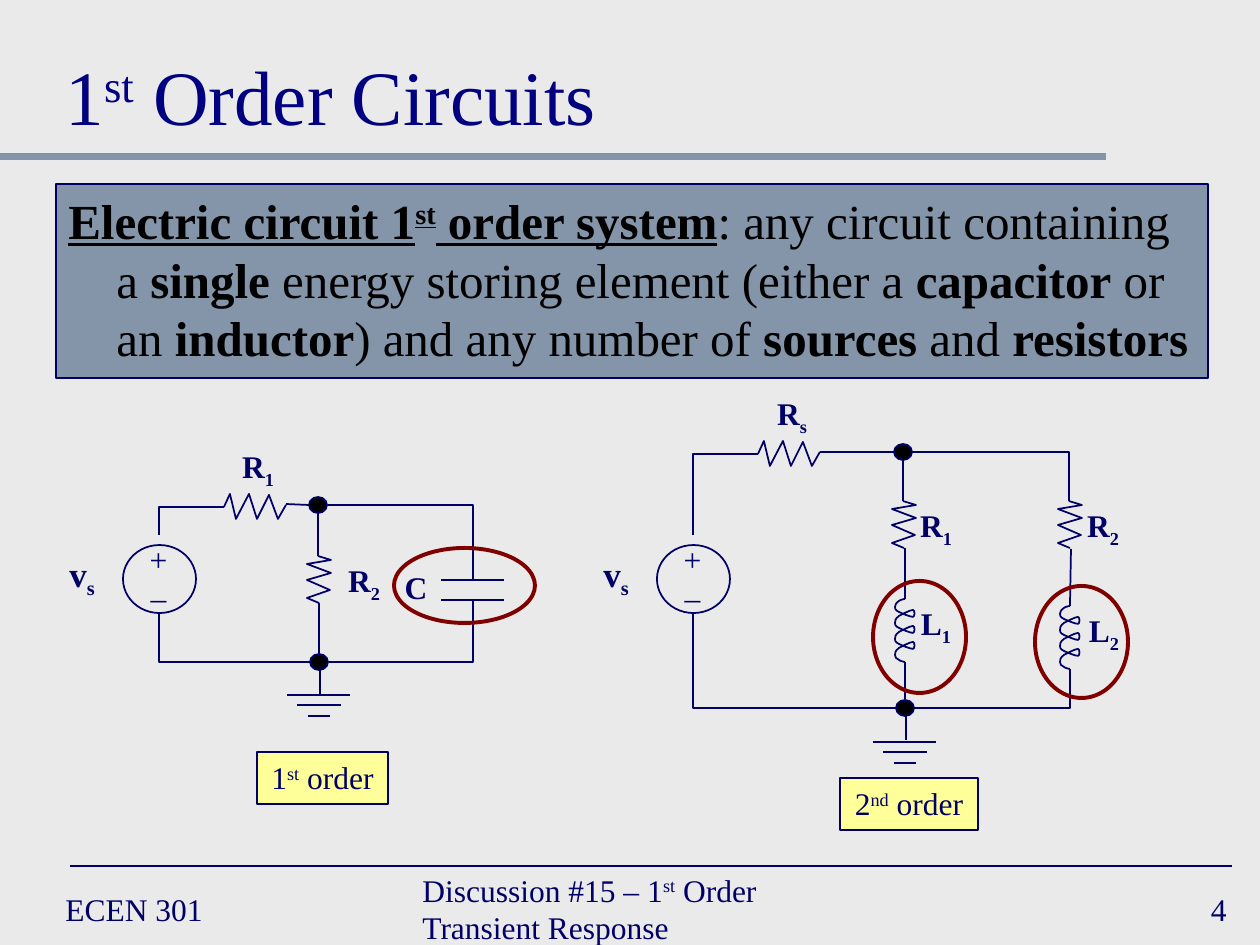
from lxml import etree
from pptx import Presentation
from pptx.dml.color import RGBColor
from pptx.enum.shapes import MSO_CONNECTOR, MSO_SHAPE
from pptx.enum.text import MSO_ANCHOR, PP_ALIGN
from pptx.oxml.ns import qn
from pptx.util import Pt

STRAIGHT, ELBOW = MSO_CONNECTOR.STRAIGHT, MSO_CONNECTOR.ELBOW
RECT, OVAL = MSO_SHAPE.RECTANGLE, MSO_SHAPE.OVAL
LEFT, CENTER, RIGHT = PP_ALIGN.LEFT, PP_ALIGN.CENTER, PP_ALIGN.RIGHT
TOP, MIDDLE, BOTTOM = MSO_ANCHOR.TOP, MSO_ANCHOR.MIDDLE, MSO_ANCHOR.BOTTOM

PX = 914400 / 126
FONT = "Times New Roman"
INK, TITLE, SLATE, RED = "000066", "000080", "8495A9", "800000"
BLACK, YELLOW, PAPER = "000000", "FFFF99", "EAEAEA"
SUP, SUB = 30, -25

# Runs are (text, baseline shift, style), where style holds "b" and "u"
HEADING = [("1", 0, ""), ("st", SUP, ""), (" Order Circuits", 0, "")]
DEFINITION = [
    ("Electric circuit 1", 0, "bu"), ("st", SUP, "bu"), (" order system", 0, "bu"),
    (": any circuit containing a ", 0, ""), ("single", 0, "b"),
    (" energy storing element (either a ", 0, ""), ("capacitor", 0, "b"),
    (" or an ", 0, ""), ("inductor", 0, "b"), (") and any number of ", 0, ""),
    ("sources", 0, "b"), (" and ", 0, ""), ("resistors", 0, "b")]
FOOTER = [
    ((53, 882, 273, 53), LEFT, [("ECEN 301", 0, "")]),
    ((410, 882, 483, 53), LEFT, [("Discussion #15 – 1", 0, ""), ("st", SUP, ""),
                                 (" Order Transient Response", 0, "")]),
    ((977, 882, 262, 53), RIGHT, [("4", 0, "")])]
CAPTIONS = [((257, 752, 131, 52), "1", "st"), ((840, 778, 138, 52), "2", "nd")]

# Component labels: centre x, top, letter, subscript, size
LABELS = [
    (258, 441, "R", "1", 18), (364, 555, "R", "2", 18), (416, 562, "C", "", 18),
    (82, 546, "v", "s", 20), (792, 388, "R", "s", 18), (936, 500, "R", "1", 18),
    (1103, 500, "R", "2", 18), (936, 598, "L", "1", 18), (1104, 605, "L", "2", 18),
    (616, 546, "v", "s", 20)]

# Corner wires leave the first point sideways and reach the second vertically
CORNERS = [
    (310, 662, 159, 614), (224, 507, 159, 535), (328, 505, 473, 580),
    (329, 662, 473, 600), (896, 708, 693, 614), (758, 454, 693, 535),
    (912, 452, 1069, 501), (914, 708, 1070, 669)]
WIRES = [
    (286, 504, 309, 505), (318, 513, 318, 556), (319, 603, 319, 654),
    (320, 662, 320, 694), (441, 580, 504, 580), (441, 600, 504, 600),
    (820, 452, 895, 452), (903, 460, 903, 501), (905, 548, 905, 599),
    (905, 662, 905, 699), (906, 708, 906, 740), (1071, 549, 1070, 606)]
SOURCES = [(159, 579), (693, 579)]
NODES = [(318, 505), (319, 662), (903, 452), (905, 708)]
GROUNDS = [(319, 695), (905, 742)]
GROUND_BARS = [(0, 63), (10, 44), (21, 22)]
FLAT_RESISTORS = [(224, 507), (758, 454)]
UPRIGHT_RESISTORS = [(318, 556), (903, 501), (1069, 501)]
COILS = [(905, 599), (1070, 606)]
RINGS = [(394, 548, 141, 75), (873, 581, 93, 112), (1035, 586, 93, 112)]

FLAT_ZIGZAG = [(0, 0), (6, -13), (12, 12), (25, -13), (33, 12), (45, -12),
               (54, 12), (62, -2)]
UPRIGHT_ZIGZAG = [(0, 0), (13, 4), (-11, 8), (13, 17), (-11, 24), (12, 34),
                  (-11, 42), (1, 47)]
COIL_START = [(0, 0), (-1, 0), (-5, 1), (-6, 2), (-9, 4), (-10, 6), (-10, 8)]
COIL_TURN = [(-10, 2), (-10, 3), (-6, 5), (-4, 6), (5, 10), (8, 10), (10, 10),
             (10, 3), (8, 3), (5, 3), (-4, 8), (-6, 9), (-10, 12), (-10, 14), (-10, 16)]
COIL_END = [(-10, 58), (-9, 60), (-6, 61), (-5, 62), (-1, 63), (0, 63)]
COIL = (COIL_START + [(x, y + 8 + 16 * turn) for turn in range(3) for x, y in COIL_TURN]
        + COIL_END)


def emu(*values):
    return [round(v * PX) for v in values]


def rgb(color):
    return RGBColor.from_string(color)


def outline(sp, fill, line, width=1):
    sp.shadow.inherit = False
    if fill:
        sp.fill.solid()
        sp.fill.fore_color.rgb = rgb(fill)
    else:
        sp.fill.background()
    sp.line.color.rgb = rgb(line)
    sp.line.width = Pt(width)


def add_runs(p, runs, size, color):
    for text, shift, style in runs:
        r = p.add_run()
        r.text = text
        f = r.font
        f.name, f.size, f.color.rgb = FONT, Pt(size), rgb(color)
        f.bold, f.underline = "b" in style, "u" in style
        if shift:
            r._r.get_or_add_rPr().set("baseline", str(shift * 1000))


def write(sp, paragraphs, size, color=INK, align=CENTER, anchor=TOP, wrap=False):
    tf = sp.text_frame
    tf.word_wrap, tf.vertical_anchor = wrap, anchor
    for i, runs in enumerate(paragraphs):
        p = tf.add_paragraph() if i else tf.paragraphs[0]
        p.alignment = align
        add_runs(p, runs, size, color)
    return tf


def textbox(s, box, *args, **kwargs):
    return write(s.shapes.add_textbox(*emu(*box)), *args, **kwargs)


def shape(s, kind, box, fill, line=INK, width=1):
    sp = s.shapes.add_shape(kind, *emu(*box))
    outline(sp, fill, line, width)
    return sp


def wire(s, ends, kind=STRAIGHT, color=INK, width=1):
    c = s.shapes.add_connector(kind, *emu(*ends))
    c.line.color.rgb, c.line.width = rgb(color), Pt(width)
    sp_pr = c._element.spPr
    etree.SubElement(sp_pr, qn("a:effectLst"))
    if kind == ELBOW:
        sp_pr.find(qn("a:prstGeom")).set("prst", "bentConnector2")


def polyline(s, start, offsets):
    points = [emu(start[0] + x, start[1] + y) for x, y in offsets]
    builder = s.shapes.build_freeform(*points[0])
    builder.add_line_segments(points[1:], close=False)
    sp = builder.convert_to_shape()
    outline(sp, None, INK)
    return sp


def coil(s, start):
    """Draw the coil, taking each three points after the first as one curve."""
    outline_path = polyline(s, start, COIL)._element.find(".//" + qn("a:path"))
    steps = outline_path.findall(qn("a:lnTo"))
    for i in range(0, len(steps), 3):
        curve = etree.SubElement(outline_path, qn("a:cubicBezTo"))
        for step in steps[i:i + 3]:
            curve.append(step[0])
            outline_path.remove(step)


def draw_text(s):
    title = s.shapes.title
    title.left, title.top, title.width, title.height = emu(53, 21, 1155, 126)
    write(title, [HEADING], 44, TITLE, LEFT, BOTTOM, True)

    sp = shape(s, RECT, (56, 184, 1152, 194), SLATE, width=0.75)
    tf = write(sp, [DEFINITION], 28, BLACK, LEFT, TOP, True)
    p_pr = tf.paragraphs[0]._p.get_or_add_pPr()
    p_pr.set("marL", str(emu(48)[0]))
    p_pr.set("indent", str(emu(-48)[0]))

    for box, align, runs in FOOTER:
        textbox(s, box, [runs], 18, align=align, anchor=MIDDLE)
    for box, number, suffix in CAPTIONS:
        runs = [(number, 0, ""), (suffix, SUP, ""), (" order", 0, "")]
        write(shape(s, RECT, box, YELLOW), [runs], 18)


def draw_circuits(s):
    for ends in CORNERS:
        wire(s, ends, ELBOW)
    for ends in WIRES:
        wire(s, ends)
    for x, y in GROUNDS:
        for drop, width in GROUND_BARS:
            wire(s, (x - width / 2, y + drop, x + width / 2, y + drop))
    for start in FLAT_RESISTORS:
        polyline(s, start, FLAT_ZIGZAG)
    for start in UPRIGHT_RESISTORS:
        polyline(s, start, UPRIGHT_ZIGZAG)
    for start in COILS:
        coil(s, start)
    for x, y in NODES:
        shape(s, OVAL, (x - 9, y - 8, 18, 16), BLACK)
    for x, y in SOURCES:
        shape(s, OVAL, (x - 36, y - 34, 73, 68), None)
        signs = [[("+", 0, "")], [("–", 0, "")]]
        textbox(s, (x - 22, y - 45, 43, 88), signs, 18)
    for x, top, letter, sub, size in LABELS:
        runs = [(letter, 0, "b")] + ([(sub, SUB, "b")] if sub else [])
        textbox(s, (x - 30, top, 60, 50), [runs], size)
    for box in RINGS:
        shape(s, OVAL, box, None, RED, 2.25)


def main():
    prs = Presentation()
    prs.slide_width, prs.slide_height = emu(1260, 945)
    s = prs.slides.add_slide(prs.slide_layouts[5])
    s.background.fill.solid()
    s.background.fill.fore_color.rgb = rgb(PAPER)
    wire(s, (0, 157, 1106, 157), color=SLATE, width=4)
    wire(s, (70, 866, 1232, 866))
    draw_text(s)
    draw_circuits(s)
    prs.save("out.pptx")


if __name__ == "__main__":
    main()
